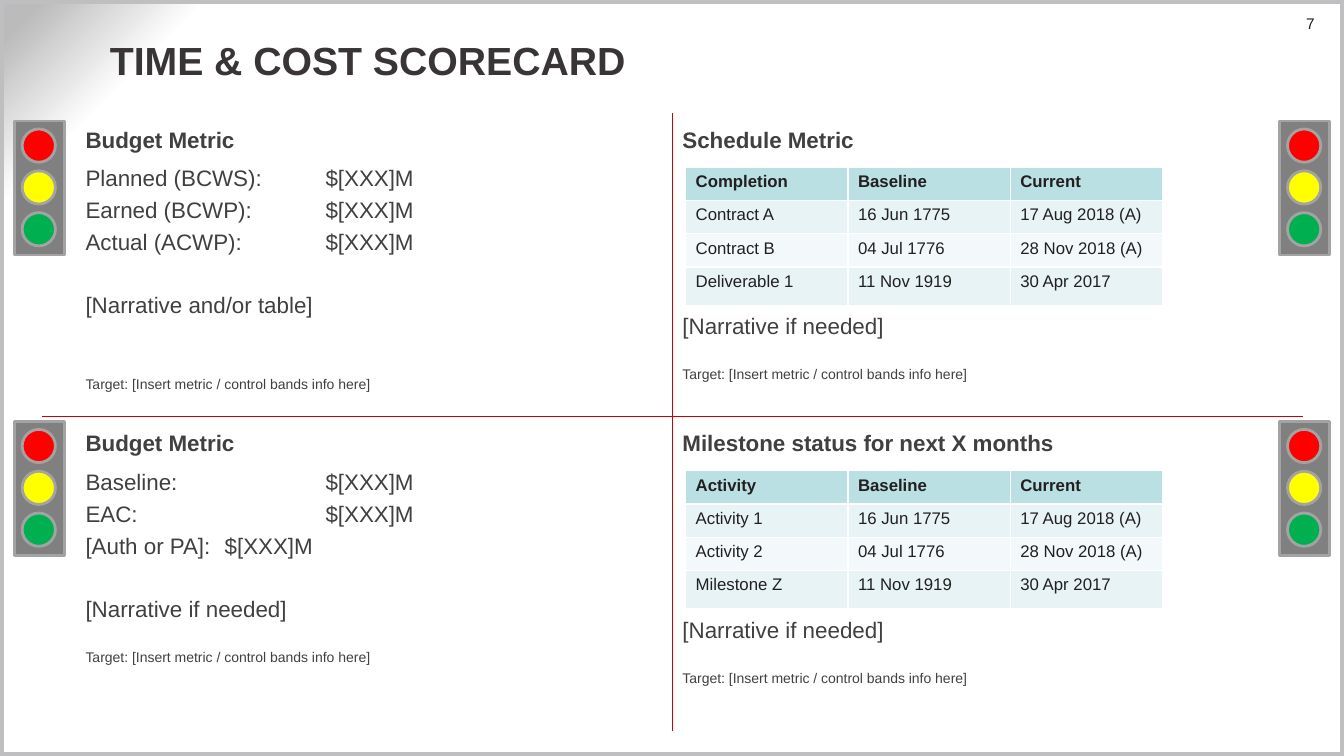
"""Build a four-quadrant time and cost scorecard slide with traffic lights."""
from dataclasses import dataclass
from typing import Any

from pptx import Presentation
from pptx.dml.color import RGBColor
from pptx.enum.shapes import MSO_CONNECTOR, MSO_SHAPE
from pptx.enum.text import MSO_ANCHOR, PP_ALIGN
from pptx.oxml import parse_xml
from pptx.oxml.ns import nsdecls
from pptx.oxml.xmlchemy import OxmlElement
from pptx.util import Inches, Pt

INK = RGBColor(0x22, 0x1F, 0x20)
TITLE_INK = RGBColor(0x39, 0x34, 0x36)
BODY_INK = RGBColor(0x40, 0x40, 0x40)
FRAME_GREY = RGBColor(0xBF, 0xBF, 0xC2)
DIVIDER_RED = RGBColor(0xCF, 0x00, 0x00)
HOUSING = RGBColor(0x80, 0x80, 0x80)
RIM = RGBColor(0xA3, 0xA3, 0xA3)
LAMPS = (RGBColor(0xFF, 0, 0), RGBColor(0xFF, 0xFF, 0), RGBColor(0, 0xB0, 0x50))
HEADER_TEAL = RGBColor(0xBB, 0xE0, 0xE3)
BANDS = (RGBColor(0xF3, 0xF9, 0xFA), RGBColor(0xE7, 0xF3, 0xF4))

NUMBER = {"name": "Arial", "size": Pt(11), "bold": False}
TITLE = {"name": "Arial", "size": Pt(28), "bold": True}
HEADING = {"name": "Arial", "size": Pt(16), "bold": True}
BODY = {"name": "Arial", "size": Pt(16), "bold": False}
TARGET = {"name": "Arial", "size": Pt(10), "bold": False}
TABLE_HEAD = {"name": "Arial", "size": Pt(12), "bold": True}
TABLE_BODY = {"name": "Arial", "size": Pt(12), "bold": False}

TIGHT = {"margin_top": 0, "margin_bottom": 0}
NUMBER_FRAME = {**TIGHT, "margin_right": 0}
TITLE_FRAME = {**TIGHT, "margin_left": Inches(0.05), "margin_right": Inches(0.05),
               "vertical_anchor": MSO_ANCHOR.MIDDLE}

LINE_GAP, SECTION_GAP, TARGET_GAP, WIDE_TARGET_GAP = 3.7, 25.8, 18.9, 41
TARGET_TEXT = "Target: [Insert metric / control bands info here]"
LEFT, RIGHT, TOP, BOTTOM = 0.75, 6.67, 1.2, 4.21
COLUMN_WIDTHS = (1.61, 1.61, 1.51)
ROW_HEIGHTS = (0.33, 0.33, 0.33, 0.38)


@dataclass
class Line:
    """One paragraph with its format and the gap above it in points."""
    text: str
    style: dict[str, Any]
    gap: float = LINE_GAP
    colour: RGBColor = BODY_INK


@dataclass
class Quadrant:
    """One quarter of the scorecard."""
    left: float
    top: float
    heading: str
    body_offset: float
    body: list[Line]
    rows: tuple[tuple[str, ...], ...] = ()


def schedule_rows(*names: str) -> tuple[tuple[str, ...], ...]:
    """Pair the row names with the shared dates."""
    dates = (("Baseline", "Current"), ("16 Jun 1775", "17 Aug 2018 (A)"),
             ("04 Jul 1776", "28 Nov 2018 (A)"), ("11 Nov 1919", "30 Apr 2017"))
    return tuple((name, *pair) for name, pair in zip(names, dates))


NARRATIVE = [Line("[Narrative if needed]", BODY), Line(TARGET_TEXT, TARGET, TARGET_GAP)]
QUADRANTS = (
    Quadrant(LEFT, TOP, "Budget Metric", 0.38, [
        Line("Planned (BCWS):\t$[XXX]M", BODY),
        Line("Earned (BCWP):\t$[XXX]M", BODY),
        Line("Actual (ACWP):\t$[XXX]M", BODY),
        Line("[Narrative and/or table]", BODY, SECTION_GAP),
        Line(TARGET_TEXT, TARGET, WIDE_TARGET_GAP)]),
    Quadrant(RIGHT, TOP, "Schedule Metric", 1.85, NARRATIVE,
             schedule_rows("Completion", "Contract A", "Contract B", "Deliverable 1")),
    Quadrant(LEFT, BOTTOM, "Budget Metric", 0.38, [
        Line("Baseline:\t\t$[XXX]M", BODY),
        Line("EAC:\t\t$[XXX]M", BODY),
        Line("[Auth or PA]:\t$[XXX]M", BODY),
        Line("[Narrative if needed]", BODY, SECTION_GAP),
        Line(TARGET_TEXT, TARGET, TARGET_GAP)]),
    Quadrant(RIGHT, BOTTOM, "Milestone status for next X months", 1.85, NARRATIVE,
             schedule_rows("Activity", "Activity 1", "Activity 2", "Milestone Z")),
)


def apply(target: Any, values: dict[str, Any]) -> None:
    """Set each named attribute on the target."""
    for name, value in values.items():
        setattr(target, name, value)


def write(paragraph: Any, line: Line) -> None:
    """Fill a paragraph with a formatted line."""
    run = paragraph.add_run()
    run.text = line.text
    apply(run.font, line.style)
    run.font.color.rgb = line.colour


def add_text(slide: Any, box: tuple[float, ...], lines: list[Line],
             frame_format: dict[str, Any], hanging: bool = False) -> Any:
    """Add a wrapped text box and return its frame."""
    frame = slide.shapes.add_textbox(*map(Inches, box)).text_frame
    apply(frame, {"word_wrap": True, **frame_format})
    for index, line in enumerate(lines):
        paragraph = frame.add_paragraph() if index else frame.paragraphs[0]
        if index:
            paragraph.space_before = Pt(line.gap)
        if hanging:
            apply_to = paragraph._p.get_or_add_pPr()
            for name, size in {"marL": 0.38, "indent": -0.38, "defTabSz": 1}.items():
                apply_to.set(name, str(Inches(size)))
        write(paragraph, line)
    return frame


def add_outlined(shapes: Any, kind: MSO_SHAPE, box: tuple[float, ...],
                 fill: RGBColor | None, edge: RGBColor, width: float) -> None:
    """Add a flat preset shape with an outline."""
    shape = shapes.add_shape(kind, *map(Inches, box))
    shape.shadow.inherit = False
    if fill is None:
        shape.fill.background()
    else:
        shape.fill.solid()
        shape.fill.fore_color.rgb = fill
    shape.line.color.rgb = edge
    shape.line.width = Pt(width)


def add_divider(slide: Any, ends: tuple[float, ...]) -> None:
    """Add a red dividing line."""
    divider = slide.shapes.add_connector(MSO_CONNECTOR.STRAIGHT, *map(Inches, ends))
    divider.line.color.rgb = DIVIDER_RED
    divider.line.width = Pt(1)
    divider._element.spPr.append(OxmlElement("a:effectLst"))


def add_traffic_light(slide: Any, left: float, top: float) -> None:
    """Add a grouped housing with three lamps."""
    shapes = slide.shapes.add_group_shape().shapes
    add_outlined(shapes, MSO_SHAPE.RECTANGLE, (left, top, 0.5, 1.33), HOUSING, RIM, 2)
    for index, colour in enumerate(LAMPS):
        lamp = (left + 0.08, top + 0.08 + 0.415 * index, 0.33, 0.33)
        add_outlined(shapes, MSO_SHAPE.OVAL, lamp, colour, RIM, 2)


def add_schedule(slide: Any, quadrant: Quadrant) -> None:
    """Add the dates table of a quadrant."""
    box = (quadrant.left + 0.13, quadrant.top + 0.46, sum(COLUMN_WIDTHS), sum(ROW_HEIGHTS))
    table = slide.shapes.add_table(len(ROW_HEIGHTS), len(COLUMN_WIDTHS),
                                   *map(Inches, box)).table
    for column, width in zip(table.columns, COLUMN_WIDTHS):
        column.width = Inches(width)
    for r, (height, texts) in enumerate(zip(ROW_HEIGHTS, quadrant.rows)):
        table.rows[r].height = Inches(height)
        for c, text in enumerate(texts):
            cell = table.cell(r, c)
            cell.fill.solid()
            cell.fill.fore_color.rgb = BANDS[r % 2] if r else HEADER_TEAL
            style = TABLE_BODY if r else TABLE_HEAD
            write(cell.text_frame.paragraphs[0], Line(text, style, colour=INK))


def set_background(slide: Any) -> None:
    """Fade the background to grey in the top left corner."""
    stops = "".join(f'<a:gs pos="{pos}000"><a:srgbClr val="{colour}"/></a:gs>'
                    for pos, colour in ((87, "FFFFFF"), (90, "FFFFFF"), (98, "BBBBBC")))
    slide.element[0].insert(0, parse_xml(
        f'<p:bg {nsdecls("p", "a")}><p:bgPr><a:gradFill rotWithShape="1">'
        f'<a:gsLst>{stops}</a:gsLst><a:path path="circle">'
        '<a:fillToRect l="100000" t="100000"/></a:path></a:gradFill>'
        '<a:effectLst/></p:bgPr></p:bg>'))


def main() -> None:
    """Draw the slide and save it."""
    deck = Presentation()
    deck.slide_width, deck.slide_height = Inches(13.33), Inches(7.5)
    slide = deck.slides.add_slide(deck.slide_layouts[6])
    set_background(slide)
    number = add_text(slide, (12.44, 0.14, 0.6, 0.19), [Line("7", NUMBER, colour=INK)],
                      NUMBER_FRAME)
    number.paragraphs[0].alignment = PP_ALIGN.RIGHT
    add_outlined(slide.shapes, MSO_SHAPE.RECTANGLE, (0, 0, 13.33, 7.5), None, FRAME_GREY, 6)
    for ends in ((0.42, 4.13, 12.92, 4.13), (6.67, 1.12, 6.67, 7.25)):
        add_divider(slide, ends)
    add_text(slide, (1.04, 0.14, 11.36, 0.91),
             [Line("TIME & COST SCORECARD", TITLE, colour=TITLE_INK)], TITLE_FRAME)
    for left in (0.14, 12.69):
        for top in (1.2, 4.18):
            add_traffic_light(slide, left, top)
    for quadrant in QUADRANTS:
        left, top = quadrant.left, quadrant.top
        add_text(slide, (left, top, 5.69, 0.42), [Line(quadrant.heading, HEADING)], {}, True)
        if quadrant.rows:
            add_schedule(slide, quadrant)
        height = 0.75 if quadrant.rows else 2.22
        add_text(slide, (left, top + quadrant.body_offset, 5.69, height), quadrant.body, {}, True)
    deck.save("out.pptx")


if __name__ == "__main__":
    main()
